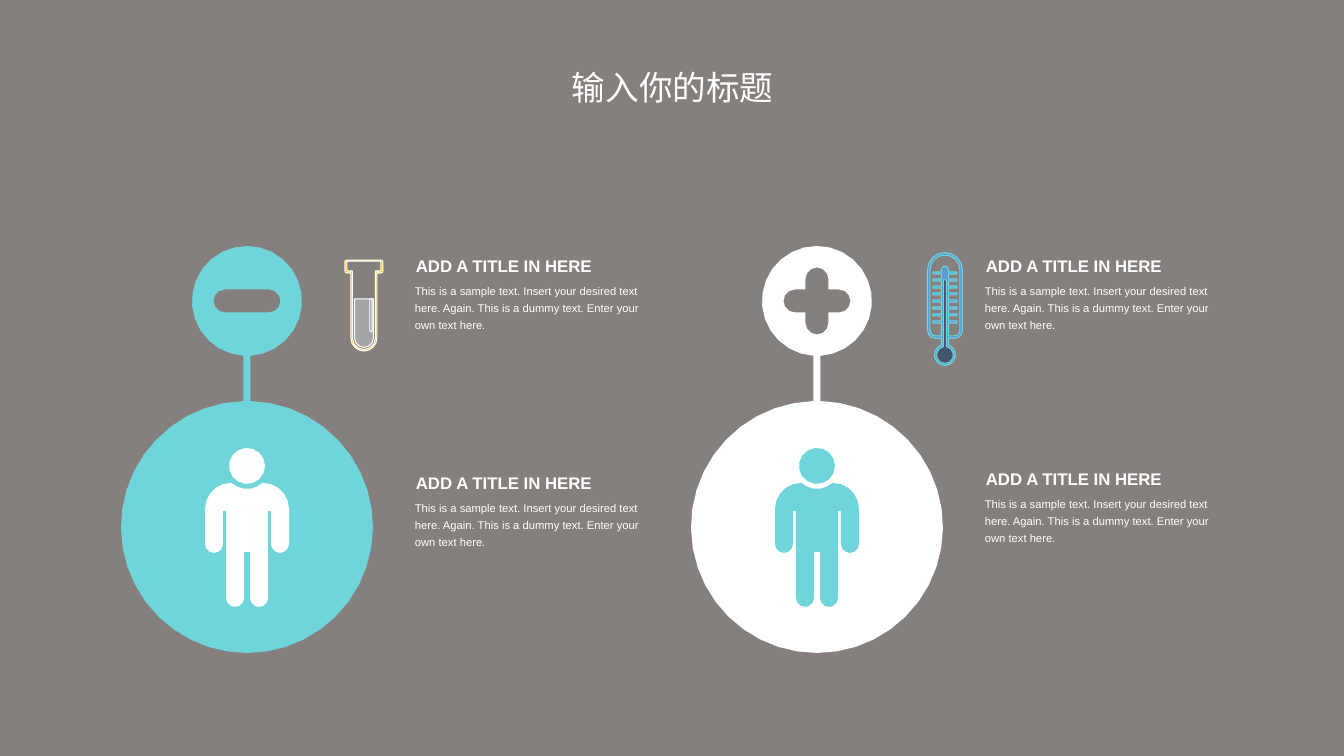
import math

from lxml import etree
from pptx import Presentation
from pptx.dml.color import RGBColor
from pptx.enum.shapes import MSO_SHAPE
from pptx.enum.text import MSO_AUTO_SIZE
from pptx.oxml.ns import qn
from pptx.util import Pt

RECTANGLE = MSO_SHAPE.RECTANGLE
GROW = MSO_AUTO_SIZE.SHAPE_TO_FIT_TEXT

EMU_PER_PX = 12192000 / 1344
SLIDE_W, SLIDE_H = 1344, 756
COLUMN_PITCH = 570
CURVE_TOLERANCE = 0.4

TAUPE, WHITE, TEAL = "85807D", "FFFFFF", "6FD5DA"
BLUE, SLATE, AMBER, GREY = "5B9BD5", "44546A", "FFC000", "A5A5A5"

HEADING = "ADD A TITLE IN HERE"
BODY = ("This is a sample text. Insert your desired text here. Again. "
        "This is a dummy text. Enter your own text here.")


def px(length):
    return round(length * EMU_PER_PX)


def rgb(color):
    return RGBColor.from_string(color)


def add_text(slide, text, x, y, w, h, size, font="Arial", bold=False, spacing=None):
    box = slide.shapes.add_textbox(px(x), px(y), px(w), px(h))
    frame = box.text_frame
    frame.word_wrap = True
    frame.auto_size = GROW
    paragraph = frame.paragraphs[0]
    if spacing:
        paragraph.line_spacing = Pt(spacing)
    run = paragraph.add_run()
    run.text = text
    run.font.size = Pt(size)
    run.font.bold = bold
    run.font.name = font
    run.font.color.rgb = rgb(WHITE)
    east_asian = etree.SubElement(run.font._element, qn("a:ea"))
    east_asian.set("typeface", font)


def arc(cx, cy, radius, start, end):
    """Points of a circular arc, in degrees clockwise from the right."""
    widest_step = math.degrees(2 * math.acos(1 - CURVE_TOLERANCE / radius))
    steps = math.ceil(abs(end - start) / widest_step)
    angles = [math.radians(start + (end - start) * i / steps) for i in range(steps + 1)]
    return [(cx + radius * math.cos(a), cy + radius * math.sin(a)) for a in angles]


def open_circle(cx, cy, radius, gap, gap_angle):
    """A circle that leaves a gap of the given width where a stem joins it."""
    half = math.degrees(math.asin(gap / 2 / radius))
    return arc(cx, cy, radius, gap_angle + half, gap_angle + 360 - half)


def mirrored(right_half):
    return right_half + [(-x, y) for x, y in reversed(right_half)]


def draw_outline(slide, x, y, contours, fill, line=None):
    """Draws contours as one shape; those inside the first become holes."""
    builder = None
    for contour in contours:
        points = [(px(x + dx), px(y + dy)) for dx, dy in contour]
        if builder is None:
            builder = slide.shapes.build_freeform(*points[0], scale=1.0)
        else:
            builder.move_to(*points[0])
        builder.add_line_segments(points[1:], close=True)
    shape = builder.convert_to_shape()
    shape.shadow.inherit = False
    shape.fill.solid()
    shape.fill.fore_color.rgb = rgb(fill)
    if line:
        shape.line.color.rgb = rgb(line)
        shape.line.width = Pt(0.75)
    else:
        shape.line.fill.background()


def add_background(slide):
    background = slide.shapes.add_shape(RECTANGLE, 0, 0, px(SLIDE_W), px(SLIDE_H))
    background.shadow.inherit = False
    background.fill.solid()
    background.fill.fore_color.rgb = rgb(TAUPE)
    background.line.color.rgb = rgb(TAUPE)
    background.line.width = Pt(1)


def minus_sign(cy):
    return arc(22, cy, 23 / 2, -90, 90) + arc(-22, cy, 23 / 2, 90, 270)


def plus_sign(cy):
    reach, half = 22, 23 / 2
    sign = []
    for turn in (0, 90, 180, 270):
        angle = math.radians(turn)
        sign += arc(reach * math.cos(angle), cy + reach * math.sin(angle),
                    half, turn - 90, turn + 90)
        corner = math.radians(turn + 45)
        sign.append((half * math.sqrt(2) * math.cos(corner),
                     cy + half * math.sqrt(2) * math.sin(corner)))
    return sign


def add_badge(slide, x, y, sign, fill, person_fill):
    """Small circle with a sign, on a stem above a large circle with a person."""
    center_x = x + 126
    badge = open_circle(0, 281, 126, 7, -90) + open_circle(0, 55, 55, 7, 90)
    draw_outline(slide, center_x, y, [badge, sign(55)], fill)
    add_person(slide, center_x, y + 220, person_fill)


def add_person(slide, x, y, fill):
    """Person around the centre of the head."""
    head = arc(0, 0, 18, 0, 360)
    shoulder = arc(16, 43, 26, -90, 0)
    hand = arc(33, 78, 9, 0, 180)
    foot = arc(12, 132, 9, 0, 180)
    neck = arc(0, 0, 23, 133, 47)
    side = shoulder + hand + [(24, 45), (21, 45)] + foot + [(3, 86)]
    draw_outline(slide, x, y, [mirrored(side) + neck, head], fill)


def add_thermometer(slide, x, y):
    tube = 7 / 2
    bulb_y = 103
    plate = (arc(0, 18, 35 / 2, -90, 0) + arc(9, 78, 17 / 2, 0, 90)
             + [(tube, 86)] + arc(0, bulb_y, 21 / 2, -70, 90))
    window = arc(0, 14 + tube, tube, -90, 0)
    for tick_y in range(20, 70, 7):
        window += [(tube, tick_y), (12, tick_y), (12, tick_y + 2), (tube, tick_y + 2)]
    window += [(tube, 84)] + arc(9, 78, 6, 90, 0) + arc(0, 18, 15, 0, -90)
    draw_outline(slide, x, y, [mirrored(plate), mirrored(window)], BLUE, TEAL)

    mercury = [(-3 / 2, 28), (3 / 2, 28)] + open_circle(0, bulb_y, 17 / 2, 3, -90)
    draw_outline(slide, x, y, [mercury], SLATE, TEAL)


def glass_wall(lip, top, lip_bottom, radius, corner):
    return mirrored(arc(lip - corner, top + corner, corner, -90, 0)
                    + arc(lip - corner, lip_bottom - corner, corner, 0, 90)
                    + [(radius, lip_bottom)] + arc(0, 78, radius, 0, 90))


def add_test_tube(slide, x, y):
    glass = [glass_wall(19, 0, 13, 13, 2), glass_wall(17, 1, 11, 23 / 2, 1)]
    draw_outline(slide, x, y, glass, AMBER, WHITE)
    level = 39
    liquid = [(-19 / 2, level), (19 / 2, level)] + arc(0, 78, 19 / 2, 0, 180)
    glint = [(6, level), (8, level)] + arc(7, 71, 1, 0, 180)
    draw_outline(slide, x, y, [liquid, glint], GREY, WHITE)


def add_caption(slide, x, y):
    add_text(slide, BODY, x, y + 27, 249, 61, size=8, spacing=12)
    add_text(slide, HEADING, x + 1, y, 214, 33, size=12, bold=True, spacing=16)


def add_column(slide, x, sign, fill, person_fill, add_icon, icon_x, icon_y, lower_y):
    add_icon(slide, x + icon_x, icon_y)
    add_badge(slide, x, 246, sign, fill, person_fill)
    for caption_y in (249, lower_y):
        add_caption(slide, x + 284, caption_y)


def main():
    deck = Presentation()
    deck.slide_width, deck.slide_height = px(SLIDE_W), px(SLIDE_H)
    slide = deck.slides.add_slide(deck.slide_layouts[6])
    add_background(slide)
    add_text(slide, "输入你的标题", 562, 62, 266, 50, size=24, font="Noto Sans CJK SC")
    left = 121
    add_column(slide, left, minus_sign, TEAL, WHITE, add_test_tube, 243, 260, 466)
    add_column(slide, left + COLUMN_PITCH, plus_sign, WHITE, TEAL,
               add_thermometer, 254, 252, 462)
    deck.save("out.pptx")


if __name__ == "__main__":
    main()
